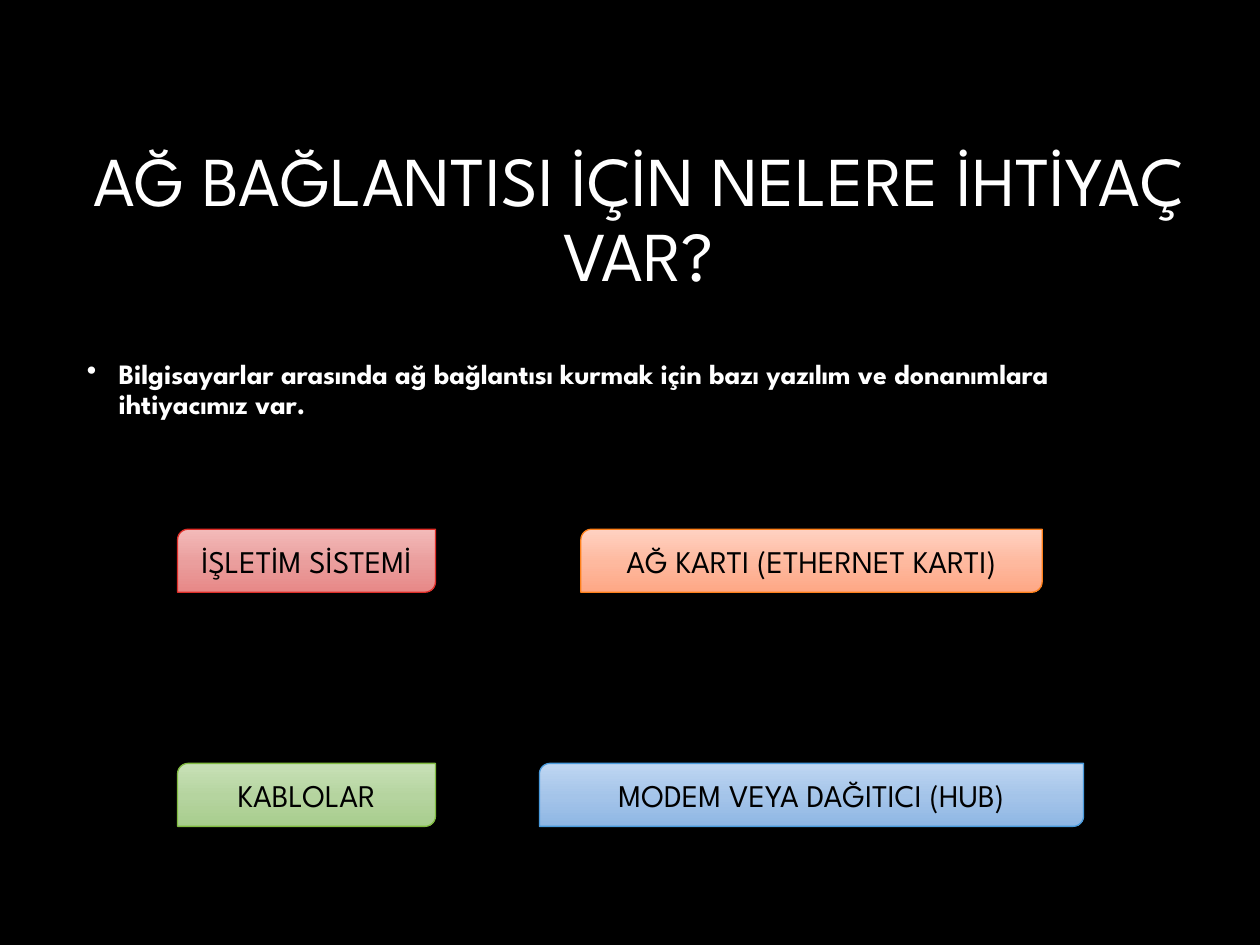
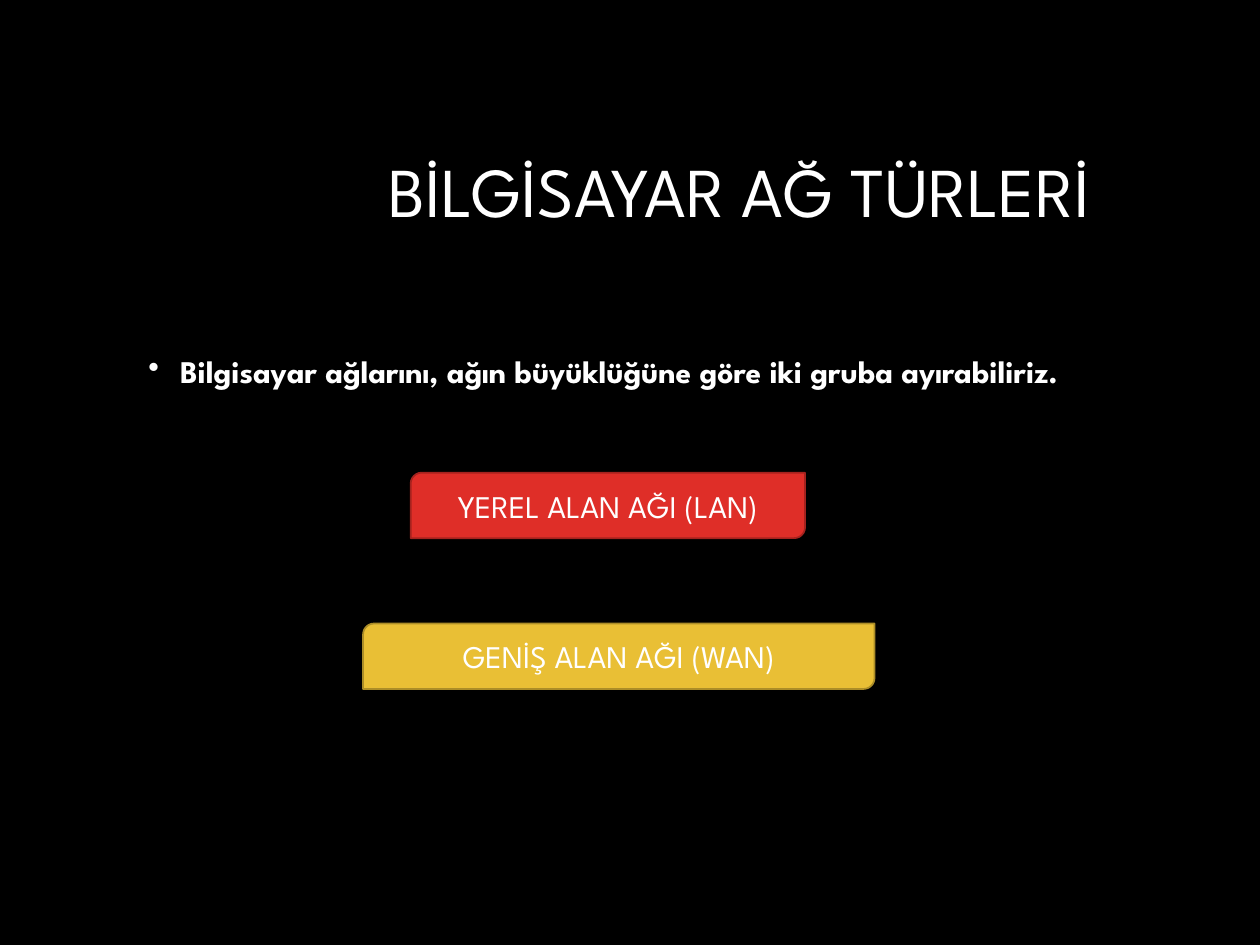
from copy import deepcopy

from lxml import etree
from pptx import Presentation
from pptx.dml.color import RGBColor
from pptx.enum.shapes import MSO_SHAPE
from pptx.enum.text import MSO_ANCHOR, PP_ALIGN
from pptx.oxml.ns import qn
from pptx.util import Cm, Pt

CENTER, MIDDLE, TOP = PP_ALIGN.CENTER, MSO_ANCHOR.MIDDLE, MSO_ANCHOR.TOP
LABEL_SHAPE = MSO_SHAPE.ROUND_2_DIAG_RECTANGLE

# Colours
BLACK = RGBColor(0x00, 0x00, 0x00)
WHITE = RGBColor(0xFF, 0xFF, 0xFF)
RED = RGBColor(0xDF, 0x2E, 0x28)
DARK_RED = RGBColor(0xA5, 0x22, 0x1E)
YELLOW = RGBColor(0xE9, 0xBF, 0x35)
DARK_YELLOW = RGBColor(0xAC, 0x8D, 0x27)
ORANGE = RGBColor(0xFE, 0x80, 0x1A)
GREEN = RGBColor(0x81, 0xBB, 0x42)
BLUE = RGBColor(0x4A, 0x9B, 0xDC)

# Gradient colours from top to bottom
STOP_POSITIONS = (0, 0.52, 1)
RED_FADE = (RGBColor(0xF3, 0xBA, 0xB9), RGBColor(0xEA, 0x9E, 0x9D), RGBColor(0xE7, 0x88, 0x87))
ORANGE_FADE = (RGBColor(0xFF, 0xD2, 0xC2), RGBColor(0xFE, 0xB9, 0x9F), RGBColor(0xFE, 0xA7, 0x85))
GREEN_FADE = (RGBColor(0xC8, 0xE1, 0xB7), RGBColor(0xB5, 0xD4, 0x9F), RGBColor(0xA8, 0xCD, 0x8D))
BLUE_FADE = (RGBColor(0xBF, 0xD6, 0xF2), RGBColor(0xA4, 0xC4, 0xE9), RGBColor(0x8F, 0xB7, 0xE4))

# Text formats
FONT = "League Spartan"
TITLE = {"size": Pt(40), "name": FONT}
LABEL = {"size": Pt(18), "name": FONT}
BODY = {"name": FONT, "bold": True}


def add_slide(prs):
    s = prs.slides.add_slide(prs.slide_layouts[6])
    s.background.fill.solid()
    s.background.fill.fore_color.rgb = BLACK
    return s


def write(p, text, formats, color):
    r = p.add_run()
    r.text = text
    for key, value in formats.items():
        setattr(r.font, key, value)
    r.font.color.rgb = color


def add_text(s, box, text, formats, anchor):
    tf = s.shapes.add_textbox(*map(Cm, box)).text_frame
    tf.word_wrap = True
    tf.vertical_anchor = anchor
    p = tf.paragraphs[0]
    p.line_spacing = 0.9
    write(p, text, formats, WHITE)
    return p


def add_title(s, box, text):
    add_text(s, box, text, TITLE, MIDDLE).alignment = CENTER


def add_bullet(s, box, text, size):
    p = add_text(s, box, text, {**BODY, "size": Pt(size)}, TOP)
    pPr = p._p.get_or_add_pPr()
    indent = Cm(0.64)
    pPr.set("marL", str(indent))
    pPr.set("indent", str(-indent))
    etree.SubElement(pPr, qn("a:buChar")).set("char", "•")


def fill_gradient(sp, colors):
    sp.fill.gradient()
    sp.fill.gradient_angle = 270
    stops = sp._element.spPr.find(".//" + qn("a:gsLst"))
    stops.insert(1, deepcopy(stops[0]))
    for stop, position, color in zip(sp.fill.gradient_stops, STOP_POSITIONS, colors):
        stop.position = position
        stop.color.rgb = color


def add_label(s, box, text, fill, line, line_width, color):
    sp = s.shapes.add_shape(LABEL_SHAPE, *map(Cm, box))
    sp.shadow.inherit = False
    if isinstance(fill, RGBColor):
        sp.fill.solid()
        sp.fill.fore_color.rgb = fill
    else:
        fill_gradient(sp, fill)
    sp.line.color.rgb = line
    sp.line.width = Pt(line_width)
    tf = sp.text_frame
    tf.vertical_anchor = MIDDLE
    p = tf.paragraphs[0]
    p.alignment = CENTER
    write(p, text, LABEL, color)


def build_requirements(prs):
    s = add_slide(prs)
    add_title(s, (1.45, 2.72, 22.86, 3.48), "AĞ BAĞLANTISI İÇİN NELERE İHTİYAÇ VAR?")
    add_bullet(s, (1.5, 7.14, 20.4, 11.53),
               "Bilgisayarlar arasında ağ bağlantısı kurmak için bazı yazılım "
               "ve donanımlara ihtiyacımız var.", 16)
    # Two columns of labels, each centred on its column
    left, right = 6.18, 16.36
    upper, lower = 10.67, 15.39
    for center, top, width, text, fade, line in (
        (left, upper, 5.2, "İŞLETİM SİSTEMİ", RED_FADE, RED),
        (right, lower, 10.97, "MODEM VEYA DAĞITICI (HUB)", BLUE_FADE, BLUE),
        (left, lower, 5.2, "KABLOLAR", GREEN_FADE, GREEN),
        (right, upper, 9.3, "AĞ KARTI (ETHERNET KARTI)", ORANGE_FADE, ORANGE),
    ):
        add_label(s, (center - width / 2, top, width, 1.27), text, fade, line, 0.75, BLACK)


def build_network_types(prs):
    s = add_slide(prs)
    add_title(s, (6.05, 2.13, 17.7, 3.58), "BİLGİSAYAR AĞ TÜRLERİ")
    add_bullet(s, (2.74, 7.06, 19.02, 2.39),
               "Bilgisayar ağlarını, ağın büyüklüğüne göre iki gruba ayırabiliriz.", 18)
    for left, top, width, text, fill, line in (
        (8.28, 9.53, 7.95, "YEREL ALAN AĞI (LAN)", RED, DARK_RED),
        (7.32, 12.57, 10.31, "GENİŞ ALAN AĞI (WAN)", YELLOW, DARK_YELLOW),
    ):
        add_label(s, (left, top, width, 1.32), text, fill, line, 1, WHITE)


def main():
    prs = Presentation()
    prs.slide_width, prs.slide_height = Cm(25.4), Cm(19.05)
    build_requirements(prs)
    build_network_types(prs)
    prs.save("out.pptx")


if __name__ == "__main__":
    main()
